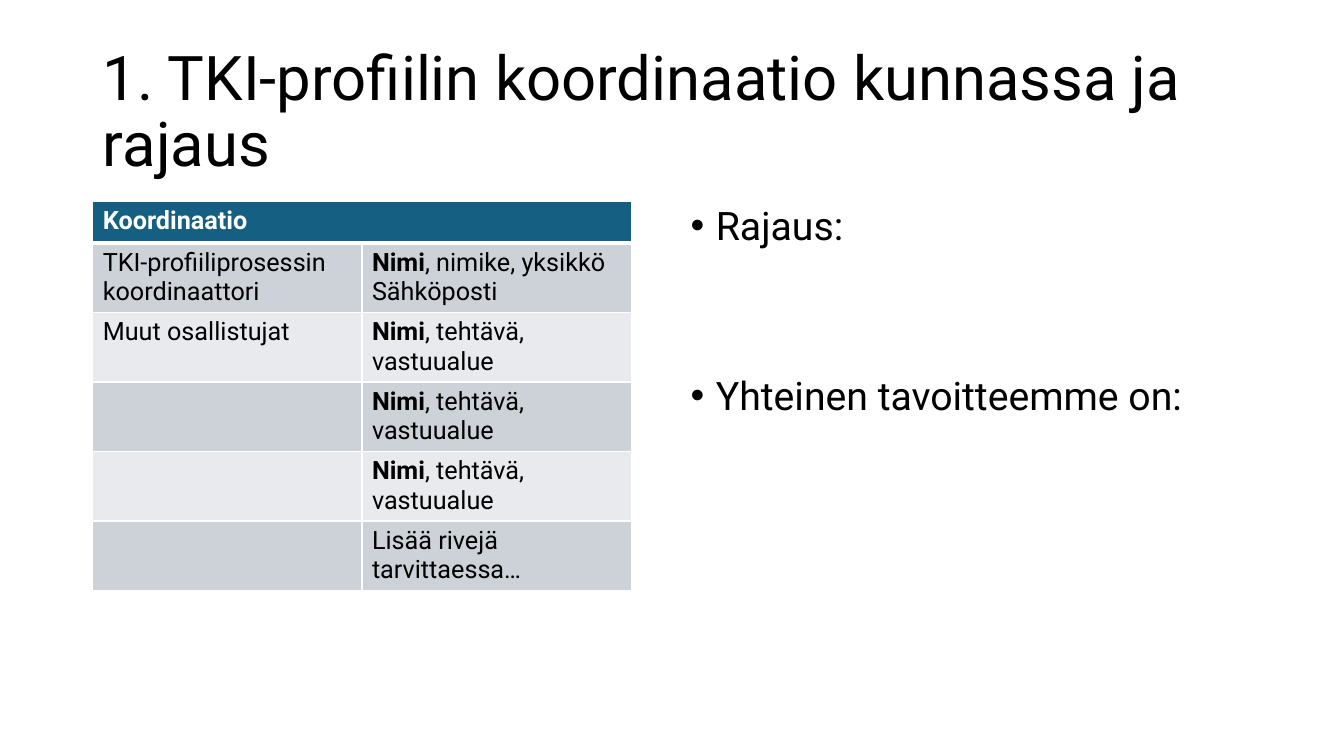
from dataclasses import dataclass

from lxml.etree import SubElement
from pptx import Presentation
from pptx.dml.color import RGBColor
from pptx.enum.text import MSO_ANCHOR, MSO_AUTO_SIZE, PP_ALIGN
from pptx.oxml.ns import qn
from pptx.util import Emu, Pt

FONT = "Roboto"
BLACK = RGBColor(0x00, 0x00, 0x00)
WHITE = RGBColor(0xFF, 0xFF, 0xFF)
TEAL = RGBColor(0x15, 0x60, 0x82)
BANDS = (RGBColor(0xCC, 0xD2, 0xD8), RGBColor(0xE8, 0xEA, 0xED))

HEADER_HEIGHT, ROW_HEIGHT = 41, 69
COLUMN_WIDTH = 267


def px(length: int) -> Emu:
    """One px is a hundredth of an inch."""
    return Emu(length * 9144)


@dataclass(frozen=True)
class Box:
    left: int
    top: int
    width: int
    height: int


@dataclass(frozen=True)
class Participant:
    role: str
    details: str
    name: str = ""
    contact: str = ""


@dataclass(frozen=True)
class Bullet:
    text: str
    space_before: int


TITLE = "1. TKI-profiilin koordinaatio kunnassa ja rajaus"
MEMBER = ", tehtävä, vastuualue"
PARTICIPANTS = [
    Participant("TKI-profiiliprosessin koordinaattori", ", nimike, yksikkö", "Nimi", "Sähköposti"),
    Participant("Muut osallistujat", MEMBER, "Nimi"),
    Participant("", MEMBER, "Nimi"),
    Participant("", MEMBER, "Nimi"),
    Participant("", "Lisää rivejä tarvittaessa…"),
]
BULLETS = [Bullet("Rajaus:", 0), Bullet("Yhteinen tavoitteemme on:", 91)]


def place(shape, box: Box) -> None:
    shape.left, shape.top = px(box.left), px(box.top)
    shape.width, shape.height = px(box.width), px(box.height)


def set_font(para, size: int, color: RGBColor = BLACK) -> None:
    para.font.name = FONT
    para.font.size = Pt(size)
    para.font.color.rgb = color


def fill_title(title) -> None:
    place(title, Box(92, 40, 1150, 145))
    frame = title.text_frame
    frame.text = TITLE
    frame.word_wrap = True
    frame.auto_size = MSO_AUTO_SIZE.NONE
    frame.vertical_anchor = MSO_ANCHOR.MIDDLE
    para = frame.paragraphs[0]
    para.alignment = PP_ALIGN.LEFT
    para.line_spacing = 0.9
    set_font(para, 44)


def fill_body(body) -> None:
    place(body, Box(675, 200, 567, 476))
    frame = body.text_frame
    frame.text = "\n".join(bullet.text for bullet in BULLETS)
    frame.word_wrap = True
    frame.auto_size = MSO_AUTO_SIZE.NONE
    for para, bullet in zip(frame.paragraphs, BULLETS):
        properties = para._p.get_or_add_pPr()
        properties.set("marL", str(px(25)))
        properties.set("indent", str(px(-25)))
        para.line_spacing = 0.9
        para.space_before = Pt(bullet.space_before)
        set_font(para, 28)


def style_cell(cell, fill: RGBColor, top: int = 1, bottom: int = 1) -> None:
    """Fill the cell and give it white borders, widths in points."""
    cell.fill.solid()
    cell.fill.fore_color.rgb = fill
    properties = cell._tc.get_or_add_tcPr()
    widths = {"a:lnL": 1, "a:lnR": 1, "a:lnT": top, "a:lnB": bottom}
    for position, (tag, width) in enumerate(widths.items()):
        line = SubElement(properties, qn(tag), w=str(Pt(width)))
        SubElement(SubElement(line, qn("a:solidFill")), qn("a:srgbClr"), val=str(WHITE))
        properties.insert(position, line)


def write_details(cell, participant: Participant) -> None:
    frame = cell.text_frame
    para = frame.paragraphs[0]
    if participant.name:
        span = para.add_run()
        span.text = participant.name
        span.font.bold = True
    para.add_run().text = participant.details
    if participant.contact:
        frame.add_paragraph().text = participant.contact


def add_coordination_table(page) -> None:
    height = HEADER_HEIGHT + ROW_HEIGHT * len(PARTICIPANTS)
    table = page.shapes.add_table(
        len(PARTICIPANTS) + 1, 2, px(92), px(200), px(2 * COLUMN_WIDTH), px(height)
    ).table
    for column in table.columns:
        column.width = px(COLUMN_WIDTH)

    table.rows[0].height = px(HEADER_HEIGHT)
    header = table.cell(0, 0)
    header.merge(table.cell(0, 1))
    header.text = "Koordinaatio"
    heading = header.text_frame.paragraphs[0]
    set_font(heading, 18, WHITE)
    heading.font.bold = True
    for cell in table.rows[0].cells:
        style_cell(cell, TEAL, bottom=3)

    for number, participant in enumerate(PARTICIPANTS, start=1):
        row = table.rows[number]
        row.height = px(ROW_HEIGHT)
        role, details = row.cells
        role.text = participant.role
        write_details(details, participant)
        for cell in (role, details):
            style_cell(cell, BANDS[(number - 1) % 2], top=3 if number == 1 else 1)
            for para in cell.text_frame.paragraphs:
                set_font(para, 18)


def main() -> None:
    deck = Presentation()
    deck.slide_width, deck.slide_height = px(1333), px(750)
    page = deck.slides.add_slide(deck.slide_layouts[1])
    fill_title(page.shapes.title)
    add_coordination_table(page)
    fill_body(page.placeholders[1])
    deck.save("out.pptx")


if __name__ == "__main__":
    main()
